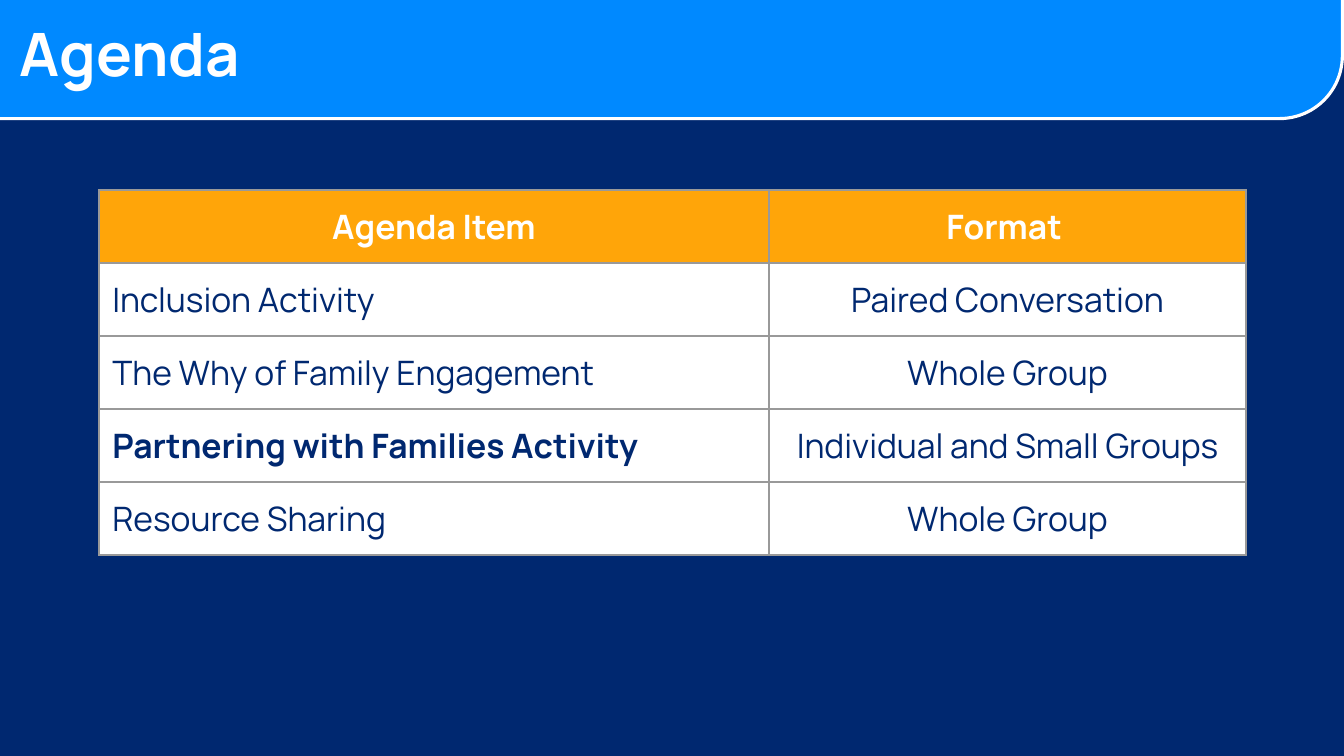
from lxml import etree
from pptx import Presentation
from pptx.dml.color import RGBColor
from pptx.enum.shapes import MSO_SHAPE
from pptx.enum.text import MSO_ANCHOR, PP_ALIGN
from pptx.oxml.ns import qn
from pptx.util import Cm, Pt

ROUND_CORNER = MSO_SHAPE.ROUND_1_RECTANGLE
MIDDLE = MSO_ANCHOR.MIDDLE
LEFT, CENTER = PP_ALIGN.LEFT, PP_ALIGN.CENTER

TITLE = "Agenda"
AGENDA = [
    ("Agenda Item", "Format "),
    ("Inclusion Activity", "Paired Conversation"),
    ("The Why of Family Engagement", "Whole Group"),
    ("Partnering with Families Activity", "Individual and Small Groups"),
    ("Resource Sharing", "Whole Group"),
]
BOLD_TEXTS = {*AGENDA[0], "Partnering with Families Activity"}
COLUMN_WIDTHS = [16.89, 12.02]
ROW_HEIGHT = 1.84
MARGIN = Cm(0.34)

FONT = "Manrope"
NAVY, BLUE, ORANGE = "002870", "0089FF", "FFA509"
WHITE, GREY = "FFFFFF", "999999"


def color(hex_value):
    return RGBColor.from_string(hex_value)


def paint(fill, hex_value):
    fill.solid()
    fill.fore_color.rgb = color(hex_value)


def set_margins(holder):
    holder.margin_left = holder.margin_right = MARGIN
    holder.margin_top = holder.margin_bottom = MARGIN


def format_text(paragraph, size, hex_value, bold, alignment):
    paragraph.alignment = alignment
    font = paragraph.runs[0].font
    font.name = FONT
    font.size = Pt(size)
    font.bold = bold
    font.color.rgb = color(hex_value)


def add_borders(cell, hex_value, width):
    properties = cell._tc.get_or_add_tcPr()
    for side in ("a:lnL", "a:lnR", "a:lnT", "a:lnB"):
        line = etree.SubElement(properties, qn(side), w=str(Pt(width)))
        fill = etree.SubElement(line, qn("a:solidFill"))
        etree.SubElement(fill, qn("a:srgbClr"), val=hex_value)


def add_banner(slide):
    banner = slide.shapes.add_shape(ROUND_CORNER, Cm(-0.18), Cm(-0.18), Cm(34.01), Cm(3.17))
    banner.adjustments[0] = 0.5
    banner._element.spPr.find(qn("a:xfrm")).set("flipV", "1")
    banner.shadow.inherit = False
    paint(banner.fill, BLUE)
    banner.line.color.rgb = color(WHITE)
    banner.line.width = Pt(2.25)


def add_title(slide):
    text_frame = slide.shapes.add_textbox(Cm(0.15), 0, Cm(32.36), Cm(2.87)).text_frame
    text_frame.word_wrap = True
    text_frame.vertical_anchor = MIDDLE
    set_margins(text_frame)
    text_frame.text = TITLE
    paragraph = text_frame.paragraphs[0]
    paragraph.line_spacing = 0.9
    format_text(paragraph, 42.7, WHITE, True, LEFT)


def add_agenda(slide):
    table = slide.shapes.add_table(
        len(AGENDA), len(COLUMN_WIDTHS), Cm(2.49), Cm(4.79),
        Cm(sum(COLUMN_WIDTHS)), Cm(ROW_HEIGHT * len(AGENDA)),
    ).table
    table.first_row = table.horz_banding = False
    for column, width in zip(table.columns, COLUMN_WIDTHS):
        column.width = Cm(width)
    for row_index, texts in enumerate(AGENDA):
        is_header = row_index == 0
        table.rows[row_index].height = Cm(ROW_HEIGHT)
        for column_index, text in enumerate(texts):
            cell = table.cell(row_index, column_index)
            set_margins(cell)
            add_borders(cell, GREY, 1.5)
            paint(cell.fill, ORANGE if is_header else WHITE)
            cell.text_frame.text = text
            format_text(
                cell.text_frame.paragraphs[0], 24, WHITE if is_header else NAVY,
                text in BOLD_TEXTS, CENTER if is_header or column_index else LEFT,
            )


def main():
    presentation = Presentation()
    presentation.slide_width, presentation.slide_height = Cm(33.87), Cm(19.05)
    slide = presentation.slides.add_slide(presentation.slide_layouts[6])
    paint(slide.background.fill, NAVY)
    add_banner(slide)
    add_title(slide)
    add_agenda(slide)
    presentation.save("out.pptx")


if __name__ == "__main__":
    main()
